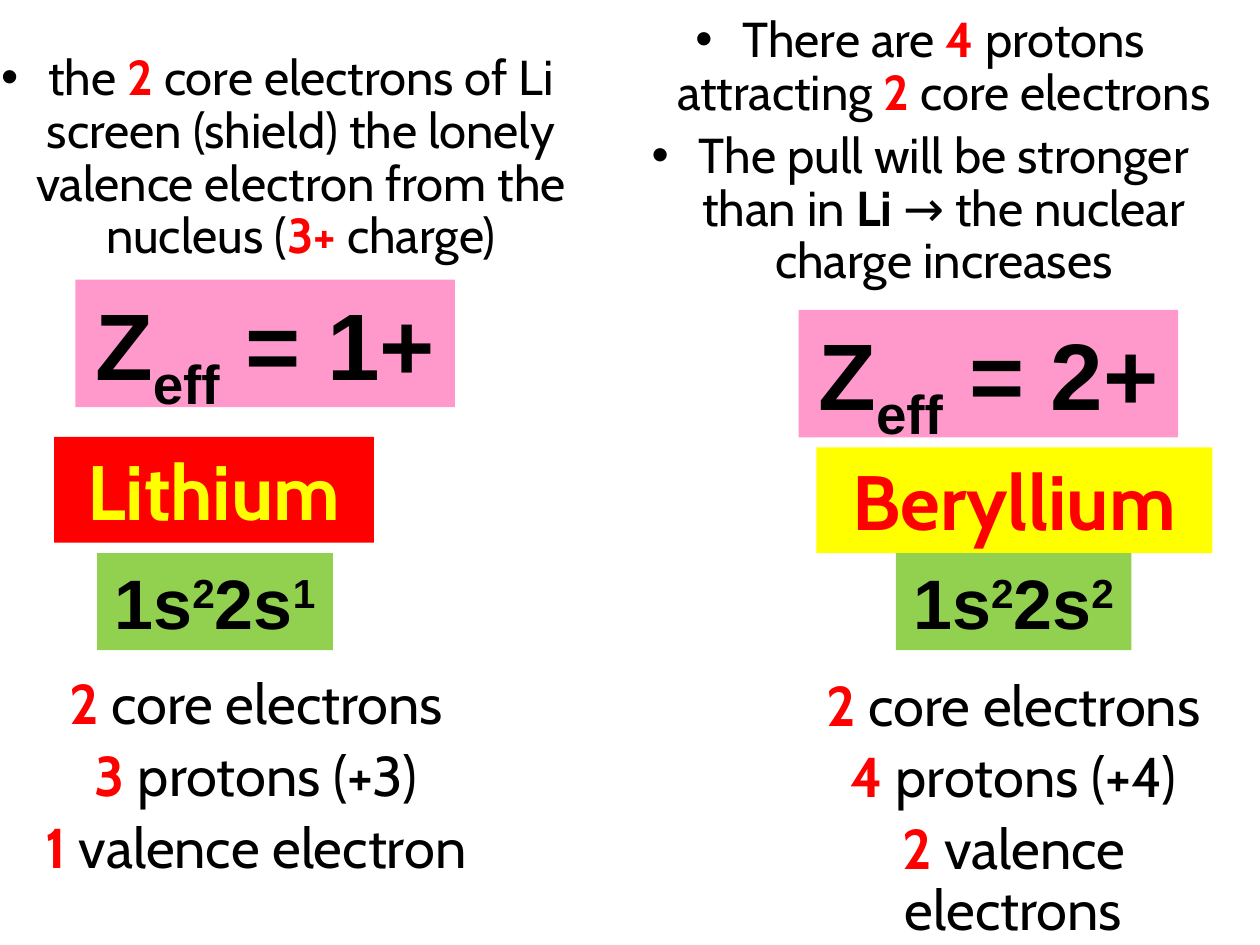
from dataclasses import dataclass

from lxml import etree
from pptx import Presentation
from pptx.dml.color import RGBColor
from pptx.enum.shapes import MSO_SHAPE
from pptx.enum.text import MSO_ANCHOR, PP_ALIGN
from pptx.oxml.ns import qn
from pptx.util import Cm, Pt

RECTANGLE = MSO_SHAPE.RECTANGLE
TOP = MSO_ANCHOR.TOP
CENTER = PP_ALIGN.CENTER


@dataclass(frozen=True)
class Theme:
    body_font: str = "Cabin"
    formula_font: str = "Arial"
    black: str = "000000"
    white: str = "FFFFFF"
    red: str = "FF0000"
    yellow: str = "FFFF00"
    green: str = "92D050"
    pink: str = "FF99CC"
    bullet_size: int = 28
    count_size: int = 32
    config_size: int = 40
    name_size: int = 44
    charge_size: int = 54
    line_spacing: float = 0.9
    space_ratio: float = 0.2
    bullet_indent: float = 0.95
    superscript: int = 30000
    subscript: int = -25000


class SlideBuilder:
    def __init__(self, slide, theme):
        self.slide = slide
        self.theme = theme

    def run(self, p, text, font, size, color, bold=False, baseline=0):
        r = p.add_run()
        r.text = text
        r.font.name = font
        r.font.size = Pt(size)
        r.font.bold = bold
        r.font.color.rgb = RGBColor.from_string(color)
        if baseline:
            r.font._element.set("baseline", str(baseline))

    def bullet(self, p):
        indent = Cm(self.theme.bullet_indent)
        pPr = p._p.get_or_add_pPr()
        pPr.set("marL", str(indent))
        pPr.set("indent", str(-indent))
        etree.SubElement(pPr, qn("a:buFont"), typeface=self.theme.formula_font)
        etree.SubElement(pPr, qn("a:buChar"), char="•")

    def paragraphs(self, box, lines, size, bulleted=False, fill=None):
        t = self.theme
        if fill:
            tf = self.rectangle(box, fill)
        else:
            tf = self.slide.shapes.add_textbox(*map(Cm, box)).text_frame
        tf.word_wrap = True
        for i, line in enumerate(lines):
            p = tf.paragraphs[0] if i == 0 else tf.add_paragraph()
            if bulleted:
                self.bullet(p)
            p.alignment = CENTER
            p.line_spacing = t.line_spacing
            p.space_before = Pt(size * t.space_ratio if i else 0)
            for text, color, bold in line:
                self.run(p, text, t.body_font, size, color, bold)

    def rectangle(self, box, fill):
        sp = self.slide.shapes.add_shape(RECTANGLE, *map(Cm, box))
        sp.shadow.inherit = False
        sp.fill.solid()
        sp.fill.fore_color.rgb = RGBColor.from_string(fill)
        sp.line.fill.background()
        tf = sp.text_frame
        tf.vertical_anchor = TOP
        return tf

    def label(self, box, fill, parts, font, size, color):
        tf = self.rectangle(box, fill)
        tf.word_wrap = False
        p = tf.paragraphs[0]
        p.alignment = CENTER
        for text, baseline in parts:
            self.run(p, text, font, size, color, True, baseline)


def main():
    t = Theme()
    prs = Presentation()
    prs.slide_width, prs.slide_height = Cm(25.4), Cm(19.05)
    s = SlideBuilder(prs.slides.add_slide(prs.slide_layouts[6]), t)

    def plain(text):
        return text, t.black, False

    def strong(text, color=t.red):
        return text, color, True

    lithium = {
        "notes_box": (-0.66, 0.94, 12.5, 5.77),
        "notes": [[
            plain("the "), strong("2 "),
            plain("core electrons of Li screen (shield) the lonely "
                  "valence electron from the nucleus ("),
            strong("3+"), plain(" charge)"),
        ]],
        "charge_at": (1.52, 5.64), "charge": "1+",
        "name_box": (1.09, 8.81, 6.45, 2.13), "name": "Lithium",
        "name_fill": t.red, "name_color": t.yellow,
        "config_left": 1.96, "valence": "1",
        "counts_at": (0.43, 13.51), "counts_fill": None,
        "counts": [("2", " core electrons"), ("3", " protons (+3)"),
                   ("1", " valence electron")],
    }
    beryllium = {
        "notes_box": (11.91, 0.18, 13.28, 7.98),
        "notes": [
            [plain("There are "), strong("4 "), plain("protons attracting "),
             strong("2 "), plain("core electrons")],
            [plain("The pull will be stronger than in "),
             strong("Li ", t.black), plain("→ the nuclear charge increases")],
        ],
        "charge_at": (16.1, 6.25), "charge": "2+",
        "name_box": (16.46, 9.02, 7.98, 2.13), "name": "Beryllium",
        "name_fill": t.yellow, "name_color": t.red,
        "config_left": 18.06, "valence": "2",
        "counts_at": (15.7, 13.54), "counts_fill": t.white,
        "counts": [("2", " core electrons"), ("4", " protons (+4)"),
                   ("2", " valence electrons")],
    }

    for e in (lithium, beryllium):
        s.paragraphs(e["notes_box"], e["notes"], t.bullet_size, bulleted=True)
        s.label((*e["charge_at"], 7.65, 2.57), t.pink,
                [("Z", 0), ("eff", t.subscript), (f" = {e['charge']}", 0)],
                t.formula_font, t.charge_size, t.black)
        s.label(e["name_box"], e["name_fill"], [(e["name"], 0)],
                t.body_font, t.name_size, e["name_color"])
        s.label((e["config_left"], 11.15, 4.75, 1.96), t.green,
                [("1s", 0), ("2", t.superscript),
                 ("2s", 0), (e["valence"], t.superscript)],
                t.formula_font, t.config_size, t.black)
        counts = [[strong(n), plain(text)] for n, text in e["counts"]]
        s.paragraphs((*e["counts_at"], 9.47, 4.8), counts, t.count_size,
                     fill=e["counts_fill"])

    prs.save("out.pptx")


if __name__ == "__main__":
    main()
